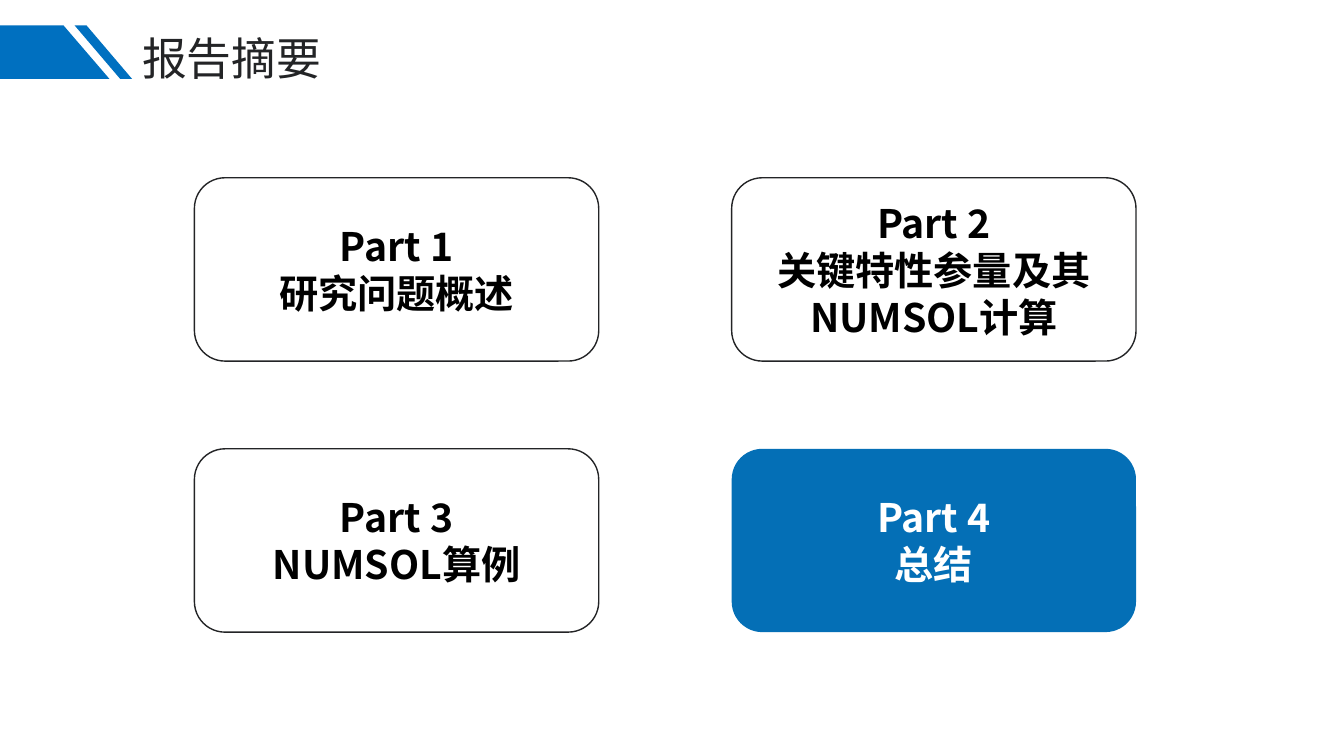
from lxml.etree import SubElement
from pptx import Presentation
from pptx.dml.color import RGBColor as RGB
from pptx.enum.shapes import MSO_SHAPE as Shape
from pptx.enum.text import MSO_ANCHOR as Anchor, PP_ALIGN as Align
from pptx.oxml.ns import qn
from pptx.util import Cm, Pt

FONT = "Noto Sans CJK SC"
HUES = {"blue": "0070C0", "deep": "046FB6", "ink": "232426",
        "black": "000000", "white": "FFFFFF"}
PARTS = [["Part 1", "研究问题概述"],
         ["Part 2", "关键特性参量及其NUMSOL计算"],
         ["Part 3", "NUMSOL算例"],
         ["Part 4", "总结"]]


def hue(name):
    """Return the named colour."""
    return RGB.from_string(HUES[name])


def write(frame, lines, size=28, color="black", bold=False, align=Align.LEFT):
    """Fill a text frame with one paragraph per line."""
    for i, line in enumerate(lines):
        para = frame.paragraphs[0] if i == 0 else frame.add_paragraph()
        para.alignment = align
        run = para.add_run()
        run.text = line
        font = run.font
        font.size, font.bold, font.name = Pt(size), bold, FONT
        font.color.rgb = hue(color)
        SubElement(font._element, qn("a:ea"), typeface=FONT)


def band(slide, left, top, points):
    """Draw one solid blue outline from points relative to its corner."""
    spots = [(Cm(left + x), Cm(top + y)) for x, y in points]
    form = slide.shapes.build_freeform(*spots[0])
    form.add_line_segments(spots[1:], close=True)
    shape = form.convert_to_shape()
    shape.shadow.inherit = False
    shape.fill.solid()
    shape.fill.fore_color.rgb = hue("blue")
    shape.line.fill.background()


def header(slide, left, top, high, title):
    """Place the slanted bands and the slide title."""
    band(slide, left, top, [(0, 0), (1.6, 0), (2.76, high), (0, high)])
    band(slide, left, top, [(1.88, 0), (2.18, 0), (3.33, high), (3.03, high)])
    box = slide.shapes.add_textbox(Cm(left + 3.33), Cm(top), Cm(5.08), Cm(1.63))
    box.text_frame.word_wrap = False
    write(box.text_frame, [title], size=32, color="ink")


def card(slide, left, top, wide, high, lines, active):
    """Place one rounded card, solid when it is the active part."""
    shape = slide.shapes.add_shape(Shape.ROUNDED_RECTANGLE,
                                   Cm(left), Cm(top), Cm(wide), Cm(high))
    shape.shadow.inherit = False
    if active:
        shape.fill.solid()
        shape.fill.fore_color.rgb = hue("deep")
        shape.line.fill.background()
    else:
        shape.fill.background()
        shape.line.color.rgb = hue("ink")
        shape.line.width = Pt(1)
    frame = shape.text_frame
    frame.word_wrap = True
    frame.vertical_anchor = Anchor.MIDDLE
    write(frame, lines, color="white" if active else "black", bold=True,
          align=Align.CENTER)


def grid(slide, left, top, wide, high, parts, active):
    """Lay the cards out in two columns at the corners of the box."""
    w, h = 10.19, 4.62
    for i, lines in enumerate(parts):
        row, col = divmod(i, 2)
        card(slide, left + col * (wide - w), top + row * (high - h), w, h,
             lines, i == active)


def main():
    """Build and save the slide."""
    deck = Presentation()
    deck.slide_width, deck.slide_height = Cm(33.87), Cm(19.05)
    slide = deck.slides.add_slide(deck.slide_layouts[6])
    header(slide, 0, 0.64, 1.35, "报告摘要")
    grid(slide, 4.9, 4.48, 23.73, 11.45, PARTS, active=3)
    deck.save("out.pptx")


if __name__ == "__main__":
    main()
